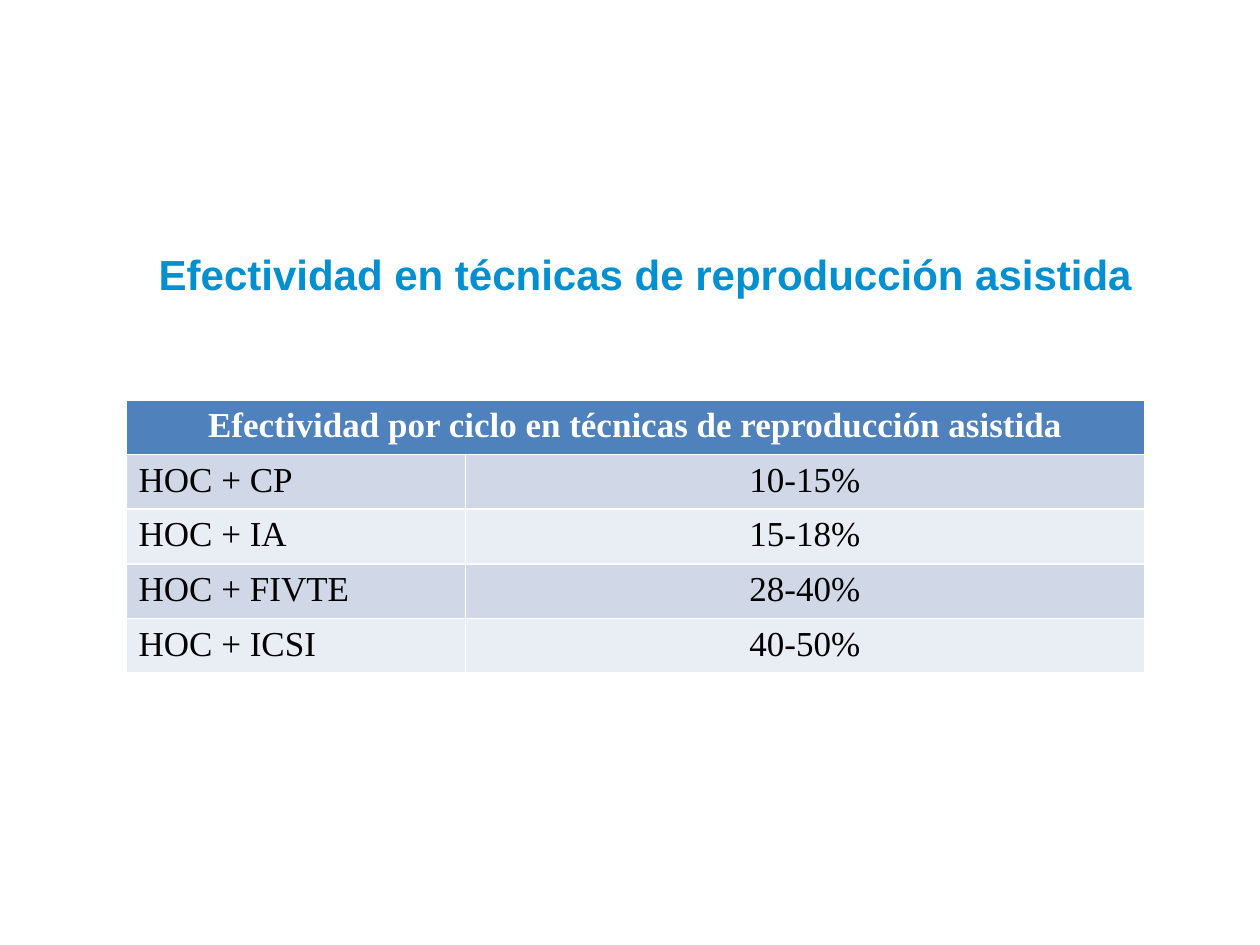
from pptx import Presentation
from pptx.dml.color import RGBColor
from pptx.enum.text import MSO_ANCHOR, MSO_AUTO_SIZE, PP_ALIGN
from pptx.util import Pt

BLUE = RGBColor(0x00, 0x8F, 0xD1)
HEAD = RGBColor(0x4F, 0x81, 0xBD)
BANDS = [RGBColor(0xD0, 0xD8, 0xE8), RGBColor(0xE9, 0xED, 0xF4)]
WHITE = RGBColor(0xFF, 0xFF, 0xFF)
BLACK = RGBColor(0x00, 0x00, 0x00)


def style(para, name, size, color, bold, align):
    para.alignment = align
    font = para.font
    font.name, font.size, font.bold = name, Pt(size), bold
    font.color.rgb = color


def fill_cell(cell, text, back, color, bold, align):
    cell.text = text
    cell.fill.solid()
    cell.fill.fore_color.rgb = back
    style(cell.text_frame.paragraphs[0], "Times New Roman", 20, color, bold, align)


deck = Presentation()
deck.slide_width, deck.slide_height = Pt(720), Pt(540)
slide = deck.slides.add_slide(deck.slide_layouts[5])

title = slide.shapes.title
title.left, title.top, title.width, title.height = Pt(77.8), Pt(144), Pt(582), Pt(27.4)
frame = title.text_frame
frame.text = "Efectividad en técnicas de reproducción asistida"
frame.margin_left = frame.margin_right = frame.margin_top = frame.margin_bottom = 0
frame.vertical_anchor = MSO_ANCHOR.BOTTOM
frame.word_wrap = True
frame.auto_size = MSO_AUTO_SIZE.SHAPE_TO_FIT_TEXT
frame.paragraphs[0].line_spacing = 0.95
style(frame.paragraphs[0], "Arial", 24, BLUE, True, PP_ALIGN.CENTER)

rates = [
    ("HOC + CP", "10-15%"),
    ("HOC + IA", "15-18%"),
    ("HOC + FIVTE", "28-40%"),
    ("HOC + ICSI", "40-50%"),
]
count = len(rates) + 1
table = slide.shapes.add_table(count, 2, Pt(72), Pt(228.5), Pt(582), Pt(29.2 * count)).table
table.columns[0].width, table.columns[1].width = Pt(194), Pt(388)

table.cell(0, 0).merge(table.cell(0, 1))
fill_cell(table.cell(0, 0), "Efectividad por ciclo en técnicas de reproducción asistida",
          HEAD, WHITE, True, PP_ALIGN.CENTER)
for row, (method, rate) in enumerate(rates, 1):
    back = BANDS[(row - 1) % 2]
    fill_cell(table.cell(row, 0), method, back, BLACK, False, PP_ALIGN.LEFT)
    fill_cell(table.cell(row, 1), rate, back, BLACK, False, PP_ALIGN.CENTER)

deck.save("out.pptx")
